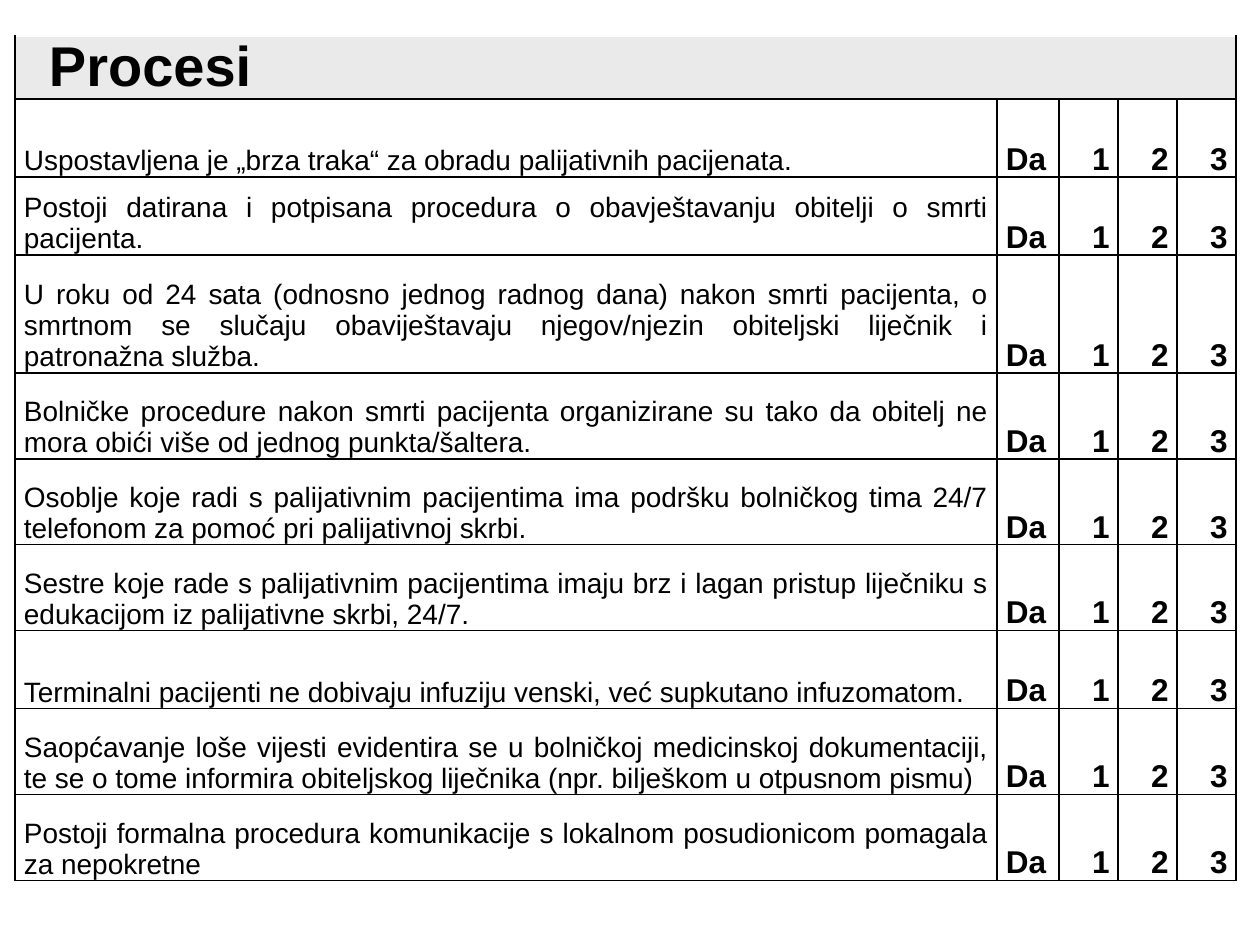
from dataclasses import dataclass
from lxml.etree import SubElement
from pptx import Presentation
from pptx.dml.color import RGBColor as RGB
from pptx.enum.text import MSO_ANCHOR as Anchor, PP_ALIGN as Align
from pptx.oxml.ns import qn
from pptx.util import Pt

PX = 914400 // 126


@dataclass(frozen=True)
class Theme:
    font: str = "Arial"
    ink: str = "000000"
    head: str = "EAEAEA"
    page: str = "FFFFFF"
    title: int = 32
    body: int = 16
    mark: int = 18
    line: int = 1
    pad: int = 9
    indent: int = 25


THEME = Theme()
BOX = (15, 36, 1221, 844)
MARKS = ("Da", "1", "2", "3")
MARK_COLS = (62, 59, 59, 59)
HEAD_H = 62
ITEMS = (
    (78, "Uspostavljena je „brza traka“ za obradu palijativnih pacijenata."),
    (78, "Postoji datirana i potpisana procedura o obavještavanju obitelji o smrti pacijenta."),
    (118, "U roku od 24 sata (odnosno jednog radnog dana) nakon smrti pacijenta, o smrtnom se "
          "slučaju obaviještavaju njegov/njezin obiteljski liječnik i patronažna služba."),
    (86, "Bolničke procedure nakon smrti pacijenta organizirane su tako da obitelj ne mora "
         "obići više od jednog punkta/šaltera."),
    (86, "Osoblje koje radi s palijativnim pacijentima ima podršku bolničkog tima 24/7 "
         "telefonom za pomoć pri palijativnoj skrbi."),
    (86, "Sestre koje rade s palijativnim pacijentima imaju brz i lagan pristup liječniku s "
         "edukacijom iz palijativne skrbi, 24/7."),
    (78, "Terminalni pacijenti ne dobivaju infuziju venski, već supkutano infuzomatom."),
    (86, "Saopćavanje loše vijesti evidentira se u bolničkoj medicinskoj dokumentaciji, te se o "
         "tome informira obiteljskog liječnika (npr. bilješkom u otpusnom pismu)"),
    (86, "Postoji formalna procedura komunikacije s lokalnom posudionicom pomagala za nepokretne"),
)


def set_edges(cell, sides):
    """Rule the given sides of a cell, named by letter in the order L, R, T, B."""
    props = cell._tc.get_or_add_tcPr()
    for side in sides:
        line = SubElement(props, qn(f"a:ln{side}"), w=str(Pt(THEME.line)))
        fill = SubElement(line, qn("a:solidFill"))
        SubElement(fill, qn("a:srgbClr"), val=THEME.ink)


def set_text(cell, text, size, bold=True, align=Align.LEFT, indent=0, anchor=Anchor.BOTTOM):
    cell.margin_left = cell.margin_right = THEME.pad * PX
    cell.margin_top = cell.margin_bottom = 0
    cell.vertical_anchor = anchor
    para = cell.text_frame.paragraphs[0]
    para.alignment = align
    if indent:
        props = para._p.get_or_add_pPr()
        props.set("marL", "0")
        props.set("indent", str(indent * PX))
    run = para.add_run()
    run.text = text
    font = run.font
    font.name, font.size, font.bold = THEME.font, Pt(size), bold
    font.color.rgb = RGB.from_string(THEME.ink)


def add_head(table):
    cells = list(table.rows[0].cells)
    cells[0].merge(cells[-1])
    set_text(cells[0], "Procesi", THEME.title, indent=THEME.indent, anchor=Anchor.MIDDLE)
    for cell in cells:
        set_edges(cell, "LRB" if cell is cells[0] else "B")
        cell.fill.solid()
        cell.fill.fore_color.rgb = RGB.from_string(THEME.head)


def add_item(row, text):
    first, *rest = row.cells
    set_text(first, text, THEME.body, bold=False, align=Align.JUSTIFY)
    for cell, mark in zip(rest, MARKS):
        if mark.isdigit():
            set_text(cell, mark, THEME.mark, align=Align.CENTER, indent=THEME.indent)
        else:
            set_text(cell, mark, THEME.mark)
    for cell in row.cells:
        set_edges(cell, "LRTB")
        cell.fill.background()


def add_list(slide, box):
    wide = box[2] - sum(MARK_COLS)
    cols = (wide, *MARK_COLS)
    rows = (HEAD_H, *(high for high, _ in ITEMS))
    frame = slide.shapes.add_table(len(rows), len(cols), *(n * PX for n in box))
    table = frame.table
    table.first_row = table.horz_banding = False
    for col, width in zip(table.columns, cols):
        col.width = width * PX
    for row, high in zip(table.rows, rows):
        row.height = high * PX
    add_head(table)
    for row, (_, text) in zip(list(table.rows)[1:], ITEMS):
        add_item(row, text)


def main():
    deck = Presentation()
    deck.slide_width, deck.slide_height = 1260 * PX, 945 * PX
    slide = deck.slides.add_slide(deck.slide_layouts[6])
    back = slide.background.fill
    back.solid()
    back.fore_color.rgb = RGB.from_string(THEME.page)
    add_list(slide, BOX)
    deck.save("out.pptx")


if __name__ == "__main__":
    main()
